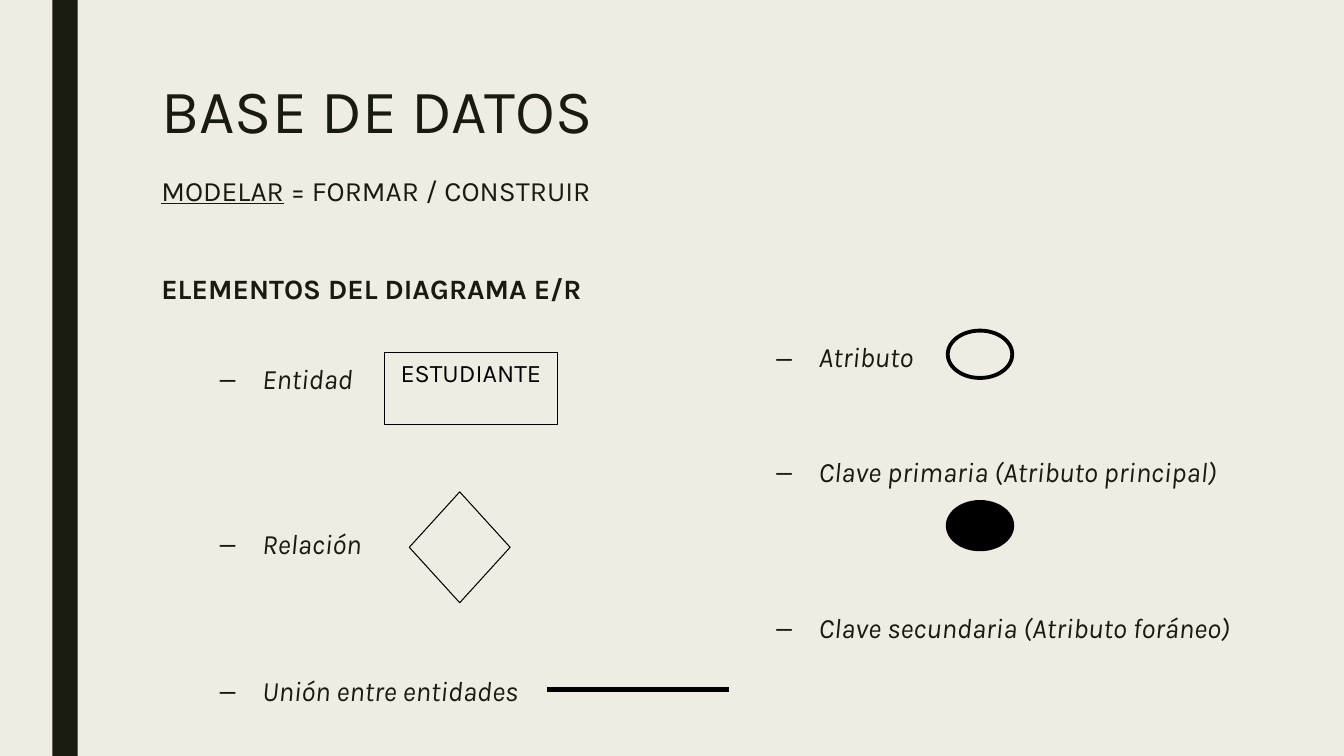
from lxml.etree import SubElement
from pptx import Presentation
from pptx.dml.color import RGBColor
from pptx.enum.shapes import MSO_CONNECTOR as Connector, MSO_SHAPE as Shape
from pptx.enum.text import MSO_ANCHOR as Anchor, MSO_AUTO_SIZE as AutoSize, PP_ALIGN as Align
from pptx.oxml.ns import qn
from pptx.util import Inches, Pt

COLORS = {"background": "EFEDE3", "ink": "191B0E", "black": "000000"}
FONT = "Karla"


def color(name):
    return RGBColor.from_string(COLORS[name])


def add_text(paragraph, text, size=20, ink="ink", bold=False, italic=False, underline=False):
    run = paragraph.add_run()
    run.text = text
    font = run.font
    font.name, font.size = FONT, Pt(size)
    font.bold, font.italic, font.underline = bold, italic, underline
    font.color.rgb = color(ink)


class SlideBuilder:
    def __init__(self, presentation):
        self.slide = presentation.slides.add_slide(presentation.slide_layouts[3])
        self.slide.background.fill.solid()
        self.slide.background.fill.fore_color.rgb = color("background")

    def frame(self, index, left, top, width, height):
        """Move a placeholder and return its text frame."""
        shape = self.slide.placeholders[index]
        shape.left, shape.top = Inches(left), Inches(top)
        shape.width, shape.height = Inches(width), Inches(height)
        text_frame = shape.text_frame
        text_frame.auto_size = AutoSize.NONE
        text_frame.vertical_anchor = Anchor.TOP
        return text_frame

    def title(self, text, *box):
        paragraph = self.frame(0, *box).paragraphs[0]
        paragraph.alignment, paragraph.line_spacing = Align.LEFT, 0.89
        add_text(paragraph, text, size=44)

    def body(self, index, box, lines):
        """Each line is (space before, has a dash, runs)."""
        text_frame = self.frame(index, *box)
        for number, (before, dashed, runs) in enumerate(lines):
            paragraph = text_frame.add_paragraph() if number else text_frame.paragraphs[0]
            paragraph.alignment, paragraph.line_spacing = Align.JUSTIFY, 0.94
            paragraph.space_before, paragraph.space_after = Pt(before), Pt(0)
            paragraph.level = int(dashed)
            properties = paragraph._p.get_or_add_pPr()
            properties.set("marL", str(Inches(1 if dashed else 0)))
            properties.set("indent", str(Inches(-0.42 if dashed else 0)))
            if dashed:
                SubElement(properties, qn("a:buChar")).set("char", "–")
            else:
                SubElement(properties, qn("a:buNone"))
            for text, style in runs:
                add_text(paragraph, text, **style)

    def shape(self, kind, left, top, width, height, fill=None, line=None, weight=0.75):
        shape = self.slide.shapes.add_shape(
            kind, Inches(left), Inches(top), Inches(width), Inches(height))
        shape.shadow.inherit = False
        if fill:
            shape.fill.solid()
            shape.fill.fore_color.rgb = color(fill)
        else:
            shape.fill.background()
        if line:
            shape.line.color.rgb = color(line)
            shape.line.width = Pt(weight)
        else:
            shape.line.fill.background()
        return shape

    def line(self, left, right, y, weight):
        connector = self.slide.shapes.add_connector(
            Connector.STRAIGHT, Inches(left), Inches(y), Inches(right), Inches(y))
        connector.line.color.rgb = color("black")
        connector.line.width = Pt(weight)
        SubElement(connector._element.spPr, qn("a:effectLst"))


def item(before, text):
    return before, True, [(text, {"italic": True})]


def main():
    presentation = Presentation()
    presentation.slide_width, presentation.slide_height = Inches(13.33), Inches(7.5)
    builder = SlideBuilder(presentation)

    # Side bar and title
    builder.shape(Shape.RECTANGLE, 0.52, 0, 0.25, 7.5, fill="ink")
    builder.title("BASE DE DATOS", 1.5, 0.75, 10.5, 0.9)

    # Lists of diagram elements
    builder.body(1, (1.5, 1.7, 5.5, 5.69), [
        (0, False, [("MODELAR", {"underline": True}), (" = FORMAR / CONSTRUIR", {})]),
        (47, False, [("ELEMENTOS DEL DIAGRAMA E/R", {"bold": True})]),
        item(42, "Entidad"),
        item(95.5, "Relación"),
        item(82, "Unión entre entidades"),
    ])
    builder.body(2, (7.02, 3.35, 5.7, 4.04), [
        item(0, "Atributo"),
        item(59, "Clave primaria (Atributo principal)"),
        item(89, "Clave secundaria (Atributo foráneo)"),
    ])

    # Entity, relation and union symbols
    entity = builder.shape(Shape.RECTANGLE, 3.81, 3.5, 1.72, 0.71, line="black")
    entity.text_frame.vertical_anchor = Anchor.TOP
    paragraph = entity.text_frame.paragraphs[0]
    paragraph.alignment = Align.CENTER
    add_text(paragraph, "ESTUDIANTE", size=18, ink="black")
    builder.shape(Shape.DIAMOND, 4.06, 4.88, 1, 1.1, line="black")
    builder.line(5.43, 7.23, 6.84, weight=3)

    # Attribute and primary key symbols
    for top, fill in ((3.28, None), (4.98, "black")):
        builder.shape(Shape.OVAL, 9.4, top, 0.64, 0.47, fill=fill, line="black", weight=2.75)

    presentation.save("out.pptx")


if __name__ == "__main__":
    main()
